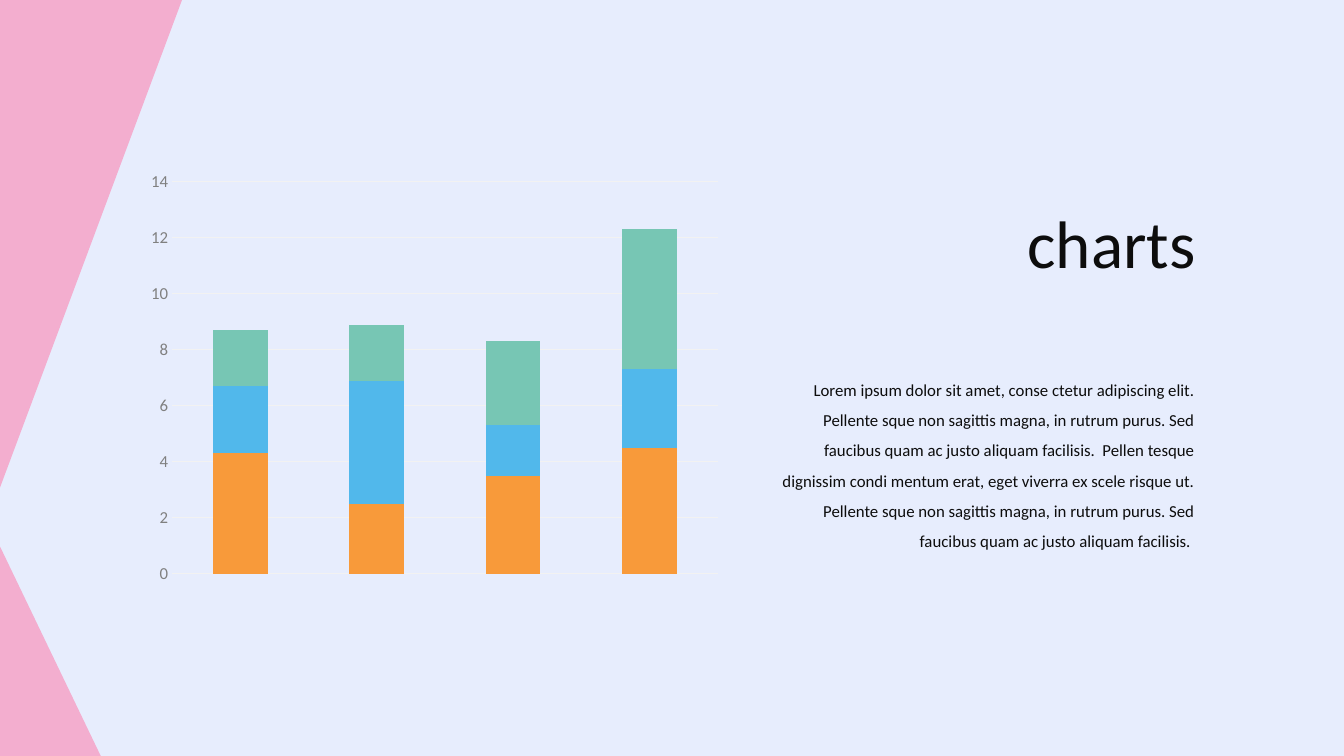
from pptx import Presentation
from pptx.chart.data import CategoryChartData
from pptx.dml.color import RGBColor
from pptx.enum.chart import XL_CHART_TYPE, XL_TICK_MARK
from pptx.enum.shapes import MSO_SHAPE
from pptx.enum.text import MSO_AUTO_SIZE, PP_ALIGN
from pptx.util import Cm, Pt

FONT = "Calibri"
INK = "0D0D0D"
PINK = "F3AECF"
SERIES = [
    ("Series 1", (4.3, 2.5, 3.5, 4.5), "F89A3A"),
    ("Series 2", (2.4, 4.4, 1.8, 2.8), "51B8EB"),
    ("Series 3", (2, 2, 3, 5), "77C6B4"),
]
BODY = (
    "Lorem ipsum dolor sit amet, conse ctetur adipiscing elit. "
    "Pellente sque non sagittis magna, in rutrum purus. Sed "
    "faucibus quam ac justo aliquam facilisis.  Pellen tesque "
    "dignissim condi mentum erat, eget viverra ex scele risque ut. "
    "Pellente sque non sagittis magna, in rutrum purus. Sed "
    "faucibus quam ac justo aliquam facilisis. "
)


def color(value):
    return RGBColor.from_string(value)


def set_font(font, size, value):
    font.name = FONT
    font.size = Pt(size)
    font.color.rgb = color(value)


def box(left, top, width, height):
    return Cm(left), Cm(top), Cm(width), Cm(height)


def add_corner(slide, area, upside_down=False):
    shape = slide.shapes.add_shape(MSO_SHAPE.RIGHT_TRIANGLE, *area)
    shape.shadow.inherit = False
    shape.fill.solid()
    shape.fill.fore_color.rgb = color(PINK)
    shape.line.fill.background()
    if upside_down:
        shape.element.spPr.get_or_add_xfrm().set("flipV", "1")


def add_stacked_chart(slide, area):
    data = CategoryChartData()
    data.categories = ["1", "2", "3", "4"]
    for name, values, _ in SERIES:
        data.add_series(name, values)
    chart = slide.shapes.add_chart(XL_CHART_TYPE.COLUMN_STACKED, *area, data).chart
    chart.has_title = False
    chart.has_legend = False
    set_font(chart.font, 10, "000000")

    # Columns
    plot = chart.plots[0]
    plot.vary_by_categories = False
    plot.gap_width = 150
    plot.overlap = 100
    for series, (_, _, fill) in zip(plot.series, SERIES):
        series.format.fill.solid()
        series.format.fill.fore_color.rgb = color(fill)

    # Axes
    chart.category_axis.visible = False
    axis = chart.value_axis
    axis.major_tick_mark = XL_TICK_MARK.NONE
    axis.minor_tick_mark = XL_TICK_MARK.NONE
    axis.format.line.fill.background()
    set_font(axis.tick_labels.font, 12, "808080")
    gridline = axis.major_gridlines.format.line
    gridline.color.rgb = color("F2F2F2")
    gridline.width = Pt(0.75)


def add_text(slide, area, text, size, line_spacing=1.0):
    text_frame = slide.shapes.add_textbox(*area).text_frame
    text_frame.word_wrap = True
    text_frame.auto_size = MSO_AUTO_SIZE.SHAPE_TO_FIT_TEXT
    paragraph = text_frame.paragraphs[0]
    paragraph.text = text
    paragraph.alignment = PP_ALIGN.RIGHT
    paragraph.line_spacing = line_spacing
    set_font(paragraph.font, size, INK)


def main():
    presentation = Presentation()
    presentation.slide_width = Cm(33.87)
    presentation.slide_height = Cm(19.05)
    slide = presentation.slides.add_slide(presentation.slide_layouts[6])
    slide.background.fill.solid()
    slide.background.fill.fore_color.rgb = color("E7EDFD")

    # Pink corners on the left edge
    add_corner(slide, box(0, 13.77, 2.54, 5.28))
    add_corner(slide, box(0, -0.03, 4.6, 12.32), upside_down=True)

    # Chart on the left, title and text on the right
    add_stacked_chart(slide, box(3.51, 4.11, 14.88, 10.82))
    add_text(slide, box(22.02, 4.95, 8.36, 2.31), "charts", 48)
    add_text(slide, box(19.13, 9.19, 11.23, 4.8), BODY, 12, line_spacing=1.5)

    presentation.save("out.pptx")


if __name__ == "__main__":
    main()
